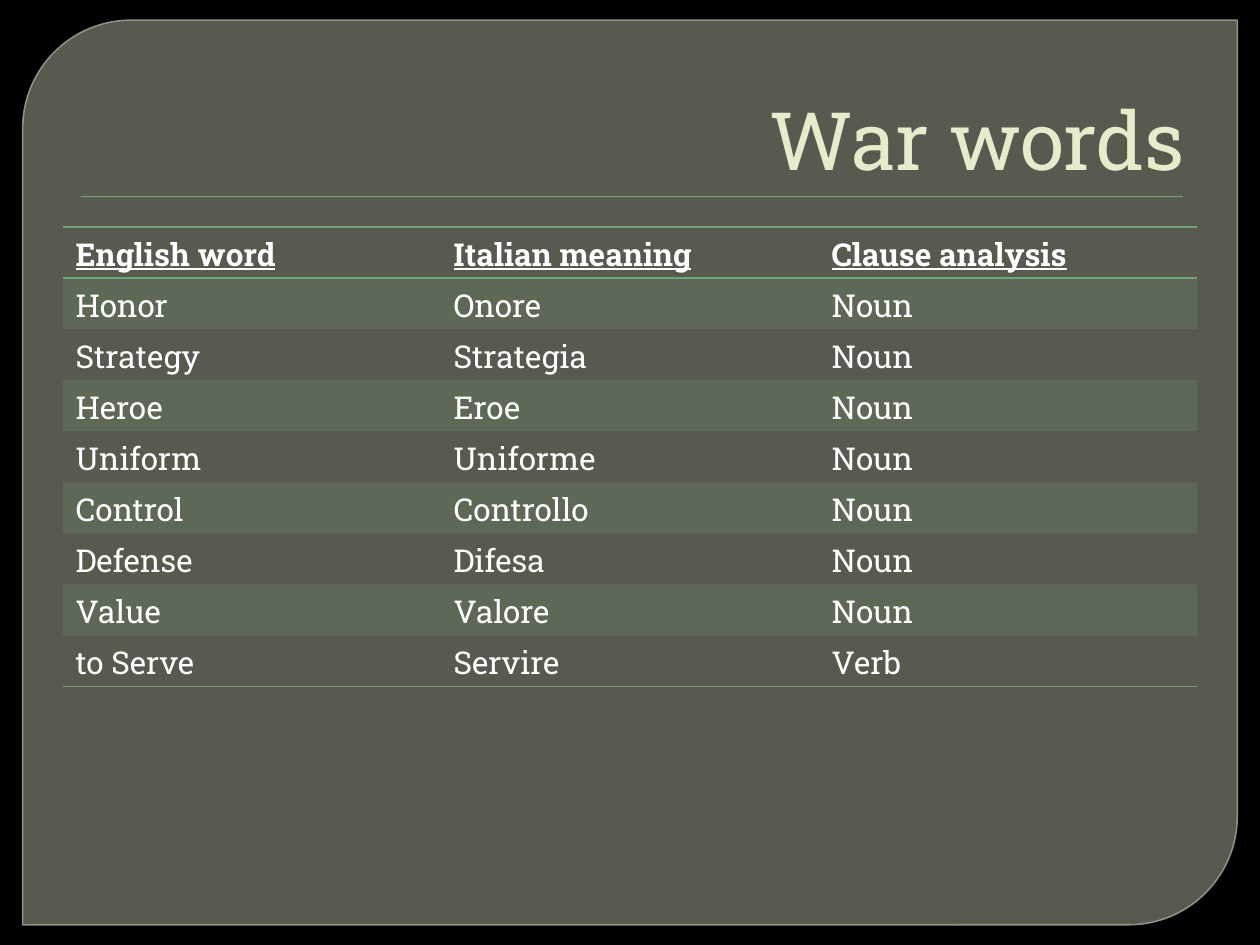
import dataclasses

import lxml.etree
import pptx
import pptx.dml.color
import pptx.enum.shapes
import pptx.enum.text
import pptx.oxml.ns
import pptx.util


@dataclasses.dataclass(frozen=True)
class Theme:
    font: str = "Roboto Slab"
    backdrop: str = "000000"
    panel: str = "888B7B"
    panel_edge: str = "9DA090"
    accent: str = "72A376"
    title: str = "E7EACB"
    body: str = "FFFFFF"
    title_size: float = 46
    body_size: float = 18


@dataclasses.dataclass(frozen=True)
class Box:
    left: float
    top: float
    width: float
    height: float

    def share(self, left, top, width, height):
        return Box(self.left + left * self.width, self.top + top * self.height,
                   width * self.width, height * self.height)

    def place(self):
        return [pptx.util.Emu(round(value)) for value in
                (self.left, self.top, self.width, self.height)]


THEME = Theme()
PLAIN_TABLE = "{2D5ABB26-0587-4C30-8999-92F81FD0307C}"
ROWS = [
    ("English word", "Italian meaning", "Clause analysis"),
    ("Honor", "Onore", "Noun"),
    ("Strategy", "Strategia", "Noun"),
    ("Heroe", "Eroe", "Noun"),
    ("Uniform", "Uniforme", "Noun"),
    ("Control", "Controllo", "Noun"),
    ("Defense", "Difesa", "Noun"),
    ("Value", "Valore", "Noun"),
    ("to Serve", "Servire", "Verb"),
]


def colour(code):
    return pptx.dml.color.RGBColor.from_string(code)


def add_element(parent, tag, **attributes):
    return lxml.etree.SubElement(parent, pptx.oxml.ns.qn(tag), **attributes)


def set_opacity(properties, route, percent):
    names = [pptx.oxml.ns.qn(name) for name in route]
    add_element(properties.find("/".join(names)), "a:alpha", val=str(percent * 1000))


def add_span(para, text, size, code, strong=False):
    span = para.add_run()
    span.text = text
    span.font.name = THEME.font
    span.font.size = pptx.util.Pt(size)
    span.font.color.rgb = colour(code)
    span.font.bold = strong
    span.font.underline = strong


def add_filled_shape(page, kind, box, code):
    shape = page.shapes.add_shape(kind, *box.place())
    shape.shadow.inherit = False
    shape.fill.solid()
    shape.fill.fore_color.rgb = colour(code)
    return shape


def add_panel(page, box):
    kind = pptx.enum.shapes.MSO_SHAPE.ROUND_2_DIAG_RECTANGLE
    panel = add_filled_shape(page, kind, box, THEME.panel)
    panel.adjustments[0] = 0.12
    panel.adjustments[1] = 0
    panel.line.color.rgb = colour(THEME.panel_edge)
    panel.line.width = pptx.util.Pt(0.87)
    properties = panel.element.spPr
    set_opacity(properties, ("a:solidFill", "a:srgbClr"), 65)
    set_opacity(properties, ("a:ln", "a:solidFill", "a:srgbClr"), 88)


def add_rule(page, box):
    kind = pptx.enum.shapes.MSO_SHAPE.RECTANGLE
    rule = add_filled_shape(page, kind, box, THEME.accent)
    rule.line.fill.background()
    effects = rule.element.spPr.find(pptx.oxml.ns.qn("a:effectLst"))
    point = str(int(pptx.util.Pt(1)))
    shadow = add_element(effects, "a:outerShdw", blurRad=point, dist=point, dir="5400000")
    shade = add_element(shadow, "a:srgbClr", val=THEME.backdrop)
    add_element(shade, "a:alpha", val="75000")


def add_title(page, box, text):
    frame = page.shapes.add_textbox(*box.place()).text_frame
    frame.word_wrap = True
    frame.vertical_anchor = pptx.enum.text.MSO_ANCHOR.BOTTOM
    para = frame.paragraphs[0]
    para.alignment = pptx.enum.text.PP_ALIGN.RIGHT
    add_span(para, text, THEME.title_size, THEME.title)


def add_border(properties, tag):
    border = add_element(properties, tag, w=str(int(pptx.util.Pt(1))))
    add_element(add_element(border, "a:solidFill"), "a:srgbClr", val=THEME.accent)


def style_cell(cell, row, last):
    properties = cell._tc.get_or_add_tcPr()
    if row == 0:
        add_border(properties, "a:lnT")
    if row in (0, last):
        add_border(properties, "a:lnB")
    if row % 2:
        cell.fill.solid()
        cell.fill.fore_color.rgb = colour(THEME.accent)
        set_opacity(properties, ("a:solidFill", "a:srgbClr"), 20)
    else:
        cell.fill.background()


def add_word_table(page, box, rows):
    frame = page.shapes.add_table(len(rows), len(rows[0]), *box.place())
    table = frame.table
    table.first_row = False
    table.horz_banding = False
    style_tag = pptx.oxml.ns.qn("a:tableStyleId")
    next(table._tbl.iter(style_tag)).text = PLAIN_TABLE
    for row, words in enumerate(rows):
        for column, word in enumerate(words):
            cell = table.cell(row, column)
            style_cell(cell, row, len(rows) - 1)
            para = cell.text_frame.paragraphs[0]
            add_span(para, word, THEME.body_size, THEME.body, strong=row == 0)


def build_page(page, box):
    page.background.fill.solid()
    page.background.fill.fore_color.rgb = colour(THEME.backdrop)
    grid = Box(box.left, box.top, box.width / 100, box.height / 75)
    add_panel(page, grid.share(1.8, 1.6, 96.4, 71.8))
    add_rule(page, grid.share(6.4, 15.56, 87.5, 0.1))
    add_title(page, grid.share(5, 2.8, 90, 12.5), "War words")
    add_word_table(page, grid.share(5, 18, 90, 36.5), ROWS)


def main():
    deck = pptx.Presentation()
    deck.slide_width = pptx.util.Inches(10)
    deck.slide_height = pptx.util.Inches(7.5)
    page = deck.slides.add_slide(deck.slide_layouts[6])
    build_page(page, Box(0, 0, deck.slide_width, deck.slide_height))
    deck.save("out.pptx")


if __name__ == "__main__":
    main()
